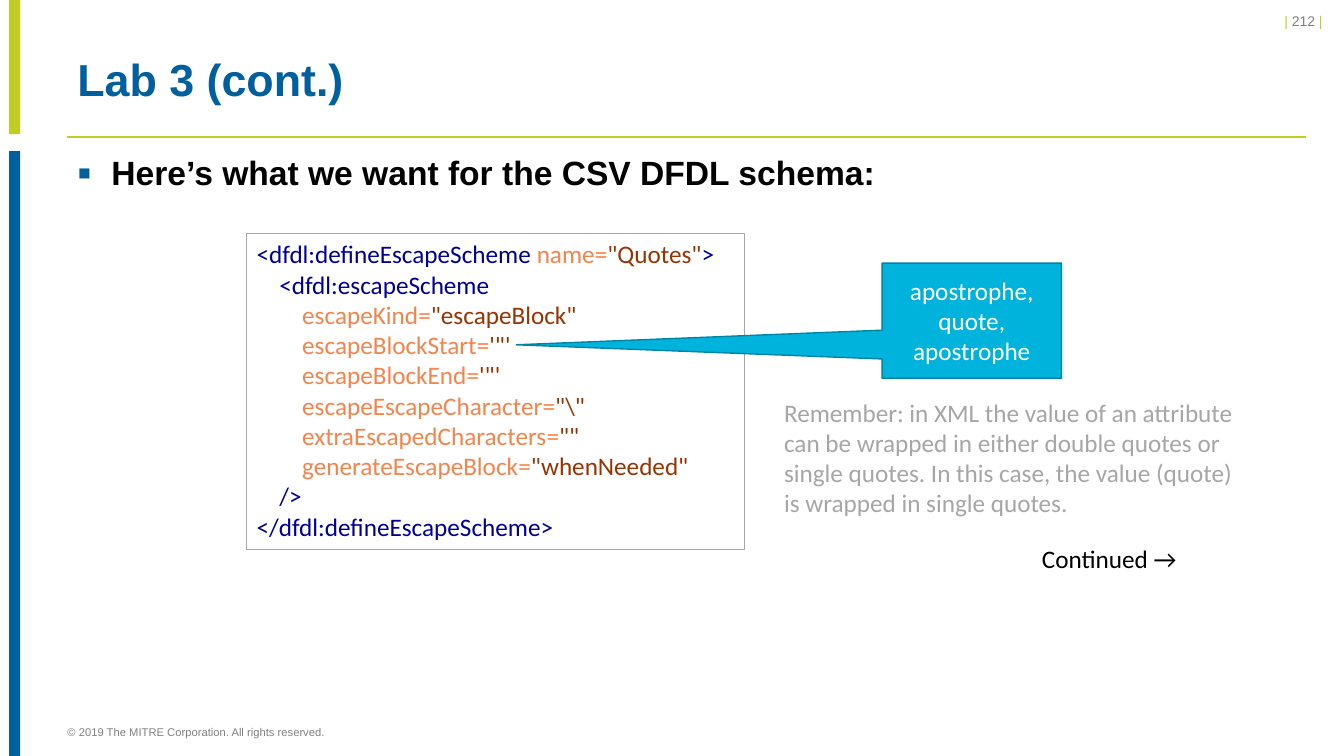
import pptx
import pptx.util
import pptx.dml.color
import pptx.enum.shapes
import pptx.enum.text
import pptx.oxml
import pptx.oxml.ns

Cm = pptx.util.Cm
Pt = pptx.util.Pt
Shape = pptx.enum.shapes.MSO_SHAPE
Align = pptx.enum.text.PP_ALIGN
Anchor = pptx.enum.text.MSO_ANCHOR

COLORS = {
    "lime": "C1CD23", "blue": "005F9E", "black": "000000", "white": "FFFFFF",
    "gray": "808080", "light gray": "A6A6A6", "cyan": "00B3DC", "teal": "0084A3",
    "tag": "000096", "attribute": "F5844C", "equals": "FF8040", "value": "993300",
}

ESCAPE_ATTRIBUTES = [
    ("escapeKind", '"escapeBlock"'),
    ("escapeBlockStart", "'\"'"),
    ("escapeBlockEnd", "'\"'"),
    ("escapeEscapeCharacter", '"\\"'),
    ("extraEscapedCharacters", '""'),
    ("generateEscapeBlock", '"whenNeeded"'),
]


def rgb(name):
    return pptx.dml.color.RGBColor.from_string(COLORS[name])


def add_bullet(paragraph, character, color, percent, indent):
    """Give the paragraph a coloured bullet with a hanging indent."""
    properties = paragraph._p.get_or_add_pPr()
    properties.set("marL", str(indent))
    properties.set("indent", str(-indent))
    namespace = pptx.oxml.ns.nsdecls("a")
    for xml in (
        f'<a:buClr {namespace}><a:srgbClr val="{COLORS[color]}"/></a:buClr>',
        f'<a:buSzPct {namespace} val="{percent * 1000}"/>',
        f'<a:buFont {namespace} typeface="Arial"/>',
        f'<a:buChar {namespace} char="{character}"/>',
    ):
        properties.append(pptx.oxml.parse_xml(xml))


def write_text(shape, text, size=18, font="Calibri", color="black", bold=False,
               align=Align.LEFT, anchor=Anchor.TOP, wrap=True, inset=None,
               line_spacing=None, space_after=None, bullet=None):
    """Fill a shape with a string, or with lines made of (text, colour) runs."""
    frame = shape.text_frame
    frame.word_wrap = wrap
    frame.vertical_anchor = anchor
    if inset is not None:
        frame.margin_left = frame.margin_right = inset
        frame.margin_top = frame.margin_bottom = inset
    paragraph = frame.paragraphs[0]
    if bullet:
        add_bullet(paragraph, **bullet)
    paragraph.alignment = align
    paragraph.line_spacing = line_spacing
    paragraph.space_after = space_after
    lines = [[(text, color)]] if isinstance(text, str) else text
    for index, line in enumerate(lines):
        if index:
            paragraph.add_line_break()
        for words, run_color in line:
            run = paragraph.add_run()
            run.text = words
            run.font.size = Pt(size)
            run.font.name = font
            run.font.bold = bold
            run.font.color.rgb = rgb(run_color)


def add_text(slide, text, left, top, width, height, **text_format):
    box = slide.shapes.add_textbox(Cm(left), Cm(top), Cm(width), Cm(height))
    write_text(box, text, **text_format)


def add_box(slide, kind, left, top, width, height, fill=None, line=None, line_width=1):
    shape = slide.shapes.add_shape(kind, Cm(left), Cm(top), Cm(width), Cm(height))
    shape.shadow.inherit = False
    if fill:
        shape.fill.solid()
        shape.fill.fore_color.rgb = rgb(fill)
    else:
        shape.fill.background()
    if line:
        shape.line.color.rgb = rgb(line)
        shape.line.width = Pt(line_width)
    else:
        shape.line.fill.background()
    return shape


def add_rule(slide, left, right, top, color):
    rule = slide.shapes.add_connector(
        pptx.enum.shapes.MSO_CONNECTOR.STRAIGHT, Cm(left), Cm(top), Cm(right), Cm(top))
    rule.line.color.rgb = rgb(color)
    rule.line.width = Pt(1)
    effects = f'<a:effectLst {pptx.oxml.ns.nsdecls("a")}/>'
    rule._element.spPr.append(pptx.oxml.parse_xml(effects))


def attribute_runs(lead, name, value):
    return [(lead + name, "attribute"), ("=", "equals"), (value, "value")]


def schema_lines():
    opening = [("<dfdl:defineEscapeScheme", "tag"),
               *attribute_runs(" ", "name", '"Quotes"'), (">", "tag")]
    attributes = [attribute_runs(" " * 8, *pair) for pair in ESCAPE_ATTRIBUTES]
    return [opening, [("    <dfdl:escapeScheme", "tag")], *attributes,
            [("    />", "tag")], [("</dfdl:defineEscapeScheme>", "tag")]]


def main():
    presentation = pptx.Presentation()
    presentation.slide_width = Cm(33.87)
    presentation.slide_height = Cm(19.05)
    slide = presentation.slides.add_slide(presentation.slide_layouts[6])

    # Side bars, rule and page number
    add_box(slide, Shape.RECTANGLE, 0.23, 0, 0.28, 3.38, fill="lime")
    add_box(slide, Shape.RECTANGLE, 0.23, 3.81, 0.28, 15.24, fill="blue")
    add_rule(slide, 1.7, 32.92, 3.45, "lime")
    add_text(slide, [[("| ", "lime"), ("212 ", "gray"), ("|", "lime")]],
             27.64, 0.18, 5.94, 0.69, size=10, font="Arial", align=Align.RIGHT)

    # Title, bullet and copyright
    add_text(slide, "Lab 3 (cont.)", 1.7, 1.02, 31.22, 2.08, size=32, font="Arial",
             color="blue", bold=True, anchor=Anchor.MIDDLE, line_spacing=0.9)
    add_text(slide, "Here’s what we want for the CSV DFDL schema:",
             1.7, 3.81, 31.22, 1.52, size=24, font="Arial", bold=True,
             line_spacing=0.9, space_after=Pt(8),
             bullet=dict(character="▪", color="blue", percent=120, indent=Cm(0.86)))
    add_text(slide, "© 2019 The MITRE Corporation. All rights reserved.",
             1.7, 18.11, 20.93, 0.66, size=8, font="Arial", color="gray",
             anchor=Anchor.MIDDLE, inset=0)

    # Schema code
    code = add_box(slide, Shape.RECTANGLE, 6.22, 5.89, 12.55, 7.95,
                   line="light gray", line_width=0.75)
    write_text(code, schema_lines())

    # Callout and remarks
    add_text(slide, "Continued →", 26.01, 13.56, 3.99, 1.02, wrap=False)
    callout = add_box(slide, Shape.RECTANGULAR_CALLOUT, 22.23, 6.63, 4.52, 2.9,
                      fill="cyan", line="teal")
    callout.adjustments[0] = -2.54
    callout.adjustments[1] = 0.21
    write_text(callout, "apostrophe, quote, apostrophe", color="white",
               align=Align.CENTER, anchor=Anchor.MIDDLE)
    add_text(slide, "Remember: in XML the value of an attribute can be wrapped in either "
             "double quotes or single quotes. In this case, the value (quote) is wrapped "
             "in single quotes.", 19.51, 9.88, 12.01, 3.33, color="light gray")

    presentation.save("out.pptx")


if __name__ == "__main__":
    main()
